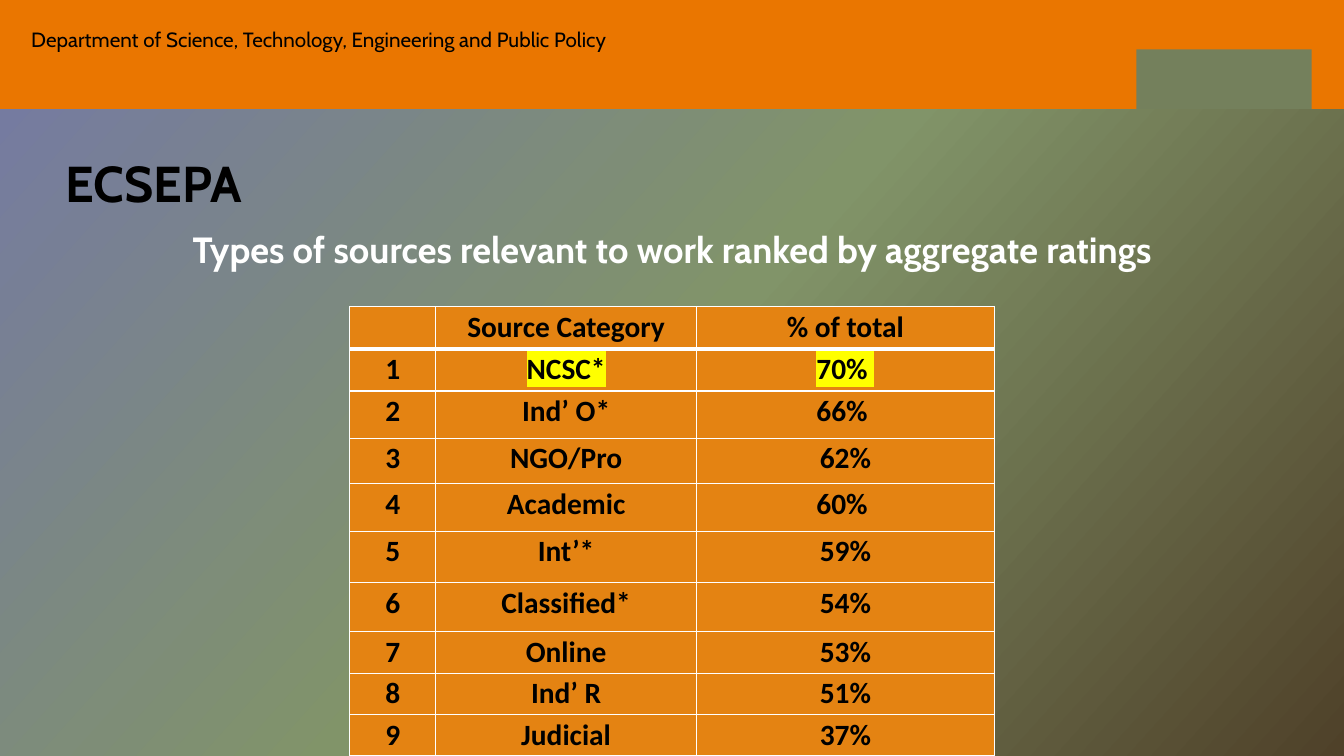
from copy import deepcopy

from lxml import etree
from pptx import Presentation
from pptx.dml.color import RGBColor
from pptx.enum.shapes import MSO_SHAPE
from pptx.enum.text import MSO_ANCHOR, MSO_AUTO_SIZE, PP_ALIGN
from pptx.oxml.ns import qn
from pptx.util import Inches, Pt

RECT = MSO_SHAPE.RECTANGLE
TOP = MSO_ANCHOR.TOP
FIXED = MSO_AUTO_SIZE.NONE
LEFT, CENTER = PP_ALIGN.LEFT, PP_ALIGN.CENTER

BLACK = RGBColor(0x00, 0x00, 0x00)
WHITE = RGBColor(0xFF, 0xFF, 0xFF)
YELLOW = RGBColor(0xFF, 0xFF, 0x00)
ORANGE = RGBColor(0xEA, 0x76, 0x00)
AMBER = RGBColor(0xE4, 0x83, 0x12)
BLUE = RGBColor(0x74, 0x78, 0xA6)
GREEN = RGBColor(0x81, 0x94, 0x69)
BROWN = RGBColor(0x4F, 0x41, 0x29)
OLIVE = RGBColor(0x74, 0x80, 0x5C)


def write(frame, text, size, font, color, bold, align, spacing):
    """Fill the first paragraph of a frame with one run and return the run."""
    para = frame.paragraphs[0]
    para.alignment = align
    para.line_spacing = spacing
    run = para.add_run()
    run.text = text
    run.font.size = Pt(size)
    run.font.name = font
    run.font.bold = bold
    run.font.color.rgb = color
    return run


def border(cell, side, width):
    """Draw a white line on one side (L, R, T or B) of a cell."""
    line = etree.SubElement(cell._tc.get_or_add_tcPr(), qn("a:ln" + side), w=str(Pt(width)))
    fill = etree.SubElement(line, qn("a:solidFill"))
    etree.SubElement(fill, qn("a:srgbClr"), val=str(WHITE))


prs = Presentation()
prs.slide_width = Inches(13.33)
prs.slide_height = Inches(7.5)
slide = prs.slides.add_slide(prs.slide_layouts[5])
shapes = slide.shapes

# Background
back = slide.background.fill
back.gradient()
back.gradient_angle = 318
stops = slide._element.find(".//" + qn("a:gsLst"))
stops.append(deepcopy(stops[0]))
for stop, color, place in zip(back.gradient_stops, (BLUE, GREEN, BROWN), (0, 0.5, 1)):
    stop.color.rgb = color
    stop.position = place

# Banner with a plain block at its right end
for left, top, width, height, color in (
    (0, 0, 13.33, 1.08, ORANGE),
    (11.27, 0.49, 1.74, 0.59, OLIVE),
):
    block = shapes.add_shape(RECT, Inches(left), Inches(top), Inches(width), Inches(height))
    block.shadow.inherit = False
    block.fill.solid()
    block.fill.fore_color.rgb = color
    block.line.fill.background()

# Headings
dept = shapes.add_textbox(Inches(0.31), Inches(0.31), Inches(8), Inches(0.43)).text_frame
dept.word_wrap = True
dept.margin_left = dept.margin_right = dept.margin_top = dept.margin_bottom = 0
write(dept, "Department of Science, Technology, Engineering and Public Policy",
      14.7, "Cabin", BLACK, False, LEFT, 0.8)

title = shapes.title
title.left, title.top = Inches(0.55), Inches(1.53)
title.width, title.height = Inches(10.51), Inches(1.18)
title.text_frame.vertical_anchor = TOP
title.text_frame.auto_size = FIXED
write(title.text_frame, "ECSEPA", 36, "Cabin", BLACK, True, LEFT, 0.9)

topic = shapes.add_textbox(Inches(0.43), Inches(2.17), Inches(12.48), Inches(0.54)).text_frame
topic.word_wrap = True
write(topic, "Types of sources relevant to work ranked by aggregate ratings",
      26, "Cabin", WHITE, True, CENTER, 1.07)

# Ranking table
ranks = [
    ("", "Source Category", "% of total"),
    ("1", "NCSC*", "70% "),
    ("2", "Ind’ O*", "66% "),
    ("3", "NGO/Pro", "62%"),
    ("4", "Academic", "60% "),
    ("5", "Int’*", "59%"),
    ("6", "Classified*", "54%"),
    ("7", "Online", "53%"),
    ("8", "Ind’ R", "51%"),
    ("9", "Judicial", "37%"),
]
widths = (0.85, 2.59, 2.95)
heights = (0.42, 0.42, 0.47, 0.45, 0.47, 0.51, 0.49, 0.41, 0.41, 0.41)
table = shapes.add_table(len(ranks), len(widths), Inches(3.47), Inches(3.04),
                         Inches(6.38), Inches(4.46)).table
table.horz_banding = False
for col, width in zip(table.columns, widths):
    col.width = Inches(width)

for r, (texts, height) in enumerate(zip(ranks, heights)):
    table.rows[r].height = Inches(height)
    for c, text in enumerate(texts):
        cell = table.cell(r, c)
        cell.margin_left = cell.margin_right = Inches(0.07)
        cell.margin_top = cell.margin_bottom = 0
        for side in "LRTB":
            thick = (r, side) in ((0, "B"), (1, "T"))
            border(cell, side, 3 if thick else 1)
        cell.fill.solid()
        cell.fill.fore_color.rgb = AMBER
        if text:
            run = write(cell.text_frame, text, 21, "Calibri", BLACK, True, CENTER, 1.07)
            if r == 1 and c > 0:
                mark = etree.Element(qn("a:highlight"))
                etree.SubElement(mark, qn("a:srgbClr"), val=str(YELLOW))
                run._r.rPr.find(qn("a:solidFill")).addnext(mark)

prs.save("out.pptx")
